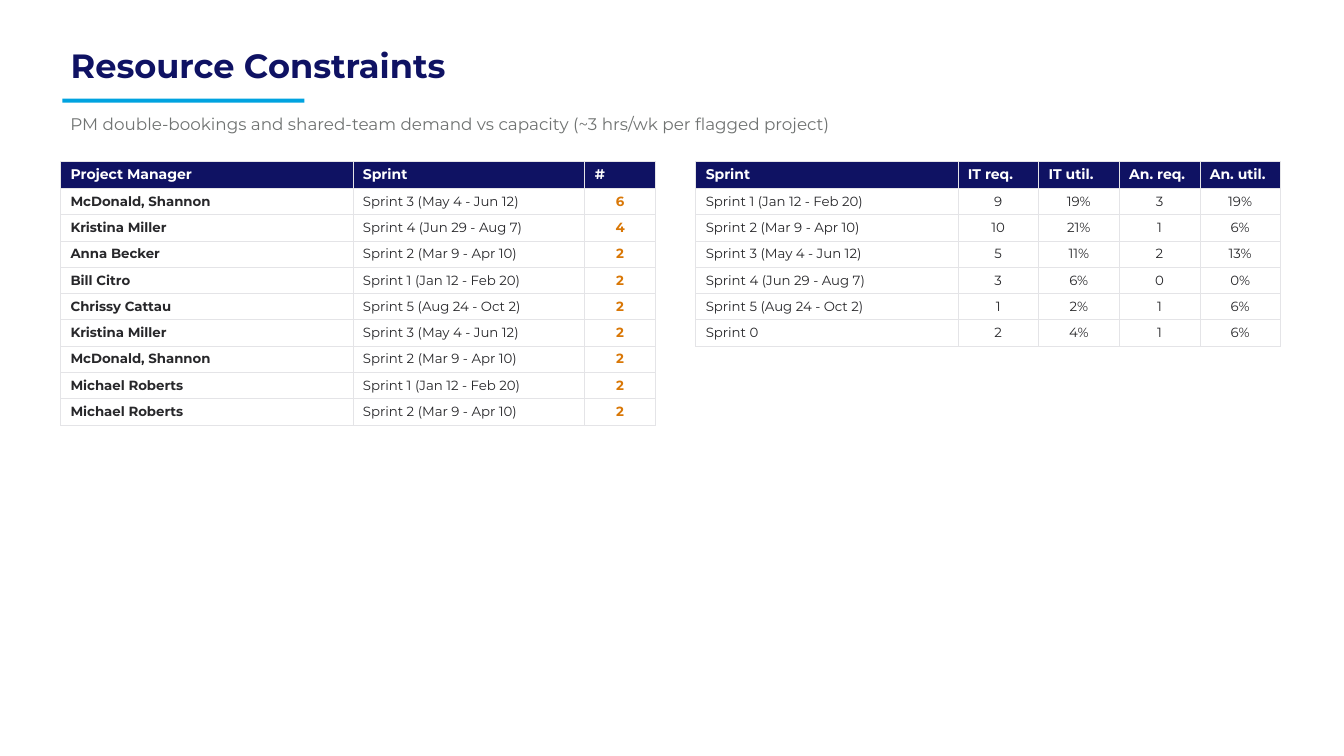
from dataclasses import dataclass

from lxml.etree import SubElement
from pptx import Presentation
from pptx.dml.color import RGBColor
from pptx.enum.shapes import MSO_SHAPE
from pptx.enum.text import MSO_ANCHOR, MSO_AUTO_SIZE, PP_ALIGN
from pptx.oxml.ns import qn
from pptx.util import Inches, Pt


@dataclass(frozen=True)
class Theme:
    """Colours, font and type sizes of the slide."""
    font: str = "Montserrat"
    navy: str = "0F1263"
    accent: str = "00A3E0"
    muted: str = "707372"
    ink: str = "27272A"
    flag: str = "D97706"
    white: str = "FFFFFF"
    border: str = "E4E4E7"
    title: float = 24
    subtitle: float = 12
    header: float = 10
    body: float = 9.5
    border_width: float = 0.5


@dataclass(frozen=True)
class Column:
    """Heading, width and body style of one table column."""
    heading: str
    width: float
    align: PP_ALIGN = PP_ALIGN.LEFT
    bold: bool = False
    color: str = Theme.ink


THEME = Theme()
ROW_HEIGHT = 0.26
SPRINTS = {
    0: "Sprint 0",
    1: "Sprint 1 (Jan 12 - Feb 20)",
    2: "Sprint 2 (Mar 9 - Apr 10)",
    3: "Sprint 3 (May 4 - Jun 12)",
    4: "Sprint 4 (Jun 29 - Aug 7)",
    5: "Sprint 5 (Aug 24 - Oct 2)",
}
BOOKING_COLUMNS = [
    Column("Project Manager", 2.9, bold=True),
    Column("Sprint", 2.3),
    Column("#", 0.7, PP_ALIGN.CENTER, True, THEME.flag),
]
BOOKINGS = [
    ("McDonald, Shannon", SPRINTS[3], "6"),
    ("Kristina Miller", SPRINTS[4], "4"),
    ("Anna Becker", SPRINTS[2], "2"),
    ("Bill Citro", SPRINTS[1], "2"),
    ("Chrissy Cattau", SPRINTS[5], "2"),
    ("Kristina Miller", SPRINTS[3], "2"),
    ("McDonald, Shannon", SPRINTS[2], "2"),
    ("Michael Roberts", SPRINTS[1], "2"),
    ("Michael Roberts", SPRINTS[2], "2"),
]
DEMAND_COLUMNS = [Column("Sprint", 2.6)] + [
    Column(heading, 0.8, PP_ALIGN.CENTER)
    for heading in ("IT req.", "IT util.", "An. req.", "An. util.")
]
DEMAND = [
    (SPRINTS[1], "9", "19%", "3", "19%"),
    (SPRINTS[2], "10", "21%", "1", "6%"),
    (SPRINTS[3], "5", "11%", "2", "13%"),
    (SPRINTS[4], "3", "6%", "0", "0%"),
    (SPRINTS[5], "1", "2%", "1", "6%"),
    (SPRINTS[0], "2", "4%", "1", "6%"),
]


def write_text(text_frame, text, size, color, bold=False, align=PP_ALIGN.LEFT):
    """Write one styled run into the first paragraph."""
    paragraph = text_frame.paragraphs[0]
    paragraph.alignment = align
    run = paragraph.add_run()
    run.text = text
    run.font.name = THEME.font
    run.font.size = Pt(size)
    run.font.bold = bold
    run.font.color.rgb = RGBColor.from_string(color)


def set_borders(cell):
    """Draw a thin line on all four sides of a cell."""
    properties = cell._tc.get_or_add_tcPr()
    for side in ("a:lnL", "a:lnR", "a:lnT", "a:lnB"):
        line = SubElement(properties, qn(side), w=str(Pt(THEME.border_width)))
        fill = SubElement(line, qn("a:solidFill"))
        SubElement(fill, qn("a:srgbClr"), val=THEME.border)


def add_heading(slide, left, top, width, title, subtitle):
    """Place the title, its accent rule and the subtitle."""
    title_shape = slide.shapes.title
    title_shape.left, title_shape.top = Inches(left), Inches(top)
    title_shape.width, title_shape.height = Inches(width), Inches(0.6)
    rule = slide.shapes.add_shape(
        MSO_SHAPE.RECTANGLE, Inches(left + 0.02), Inches(top + 0.63),
        Inches(2.4), Inches(0.04))
    rule.shadow.inherit = False
    rule.fill.solid()
    rule.fill.fore_color.rgb = RGBColor.from_string(THEME.accent)
    rule.line.fill.background()
    subtitle_shape = slide.shapes.add_textbox(
        Inches(left), Inches(top + 0.7), Inches(width), Inches(0.35))
    for shape in (title_shape, subtitle_shape):
        shape.text_frame.word_wrap = True
        shape.text_frame.auto_size = MSO_AUTO_SIZE.NONE
        shape.text_frame.vertical_anchor = MSO_ANCHOR.MIDDLE
    write_text(title_shape.text_frame, title, THEME.title, THEME.navy, True)
    write_text(subtitle_shape.text_frame, subtitle, THEME.subtitle, THEME.muted)


def add_grid(slide, left, top, columns, records):
    """Place a bordered table with a navy header row."""
    width = sum(column.width for column in columns)
    height = ROW_HEIGHT * (len(records) + 1)
    table = slide.shapes.add_table(
        len(records) + 1, len(columns), Inches(left), Inches(top),
        Inches(width), Inches(height)).table
    table.horz_banding = False
    for row in table.rows:
        row.height = Inches(ROW_HEIGHT)
    for index, column in enumerate(columns):
        table.columns[index].width = Inches(column.width)
        header = table.cell(0, index)
        set_borders(header)
        header.fill.solid()
        header.fill.fore_color.rgb = RGBColor.from_string(THEME.navy)
        write_text(header.text_frame, column.heading, THEME.header, THEME.white, True)
        for row_index, record in enumerate(records, start=1):
            cell = table.cell(row_index, index)
            set_borders(cell)
            cell.fill.background()
            write_text(cell.text_frame, record[index], THEME.body,
                       column.color, column.bold, column.align)


def main():
    """Build and save the resource constraints slide."""
    presentation = Presentation()
    presentation.slide_width = Inches(13.33)
    presentation.slide_height = Inches(7.5)
    title_only = presentation.slide_layouts.get_by_name("Title Only")
    slide = presentation.slides.add_slide(title_only)
    add_heading(
        slide, 0.6, 0.35, 12.13, "Resource Constraints",
        "PM double-bookings and shared-team demand vs capacity "
        "(~3 hrs/wk per flagged project)")
    add_grid(slide, 0.6, 1.6, BOOKING_COLUMNS, BOOKINGS)
    add_grid(slide, 6.9, 1.6, DEMAND_COLUMNS, DEMAND)
    presentation.save("out.pptx")


if __name__ == "__main__":
    main()
